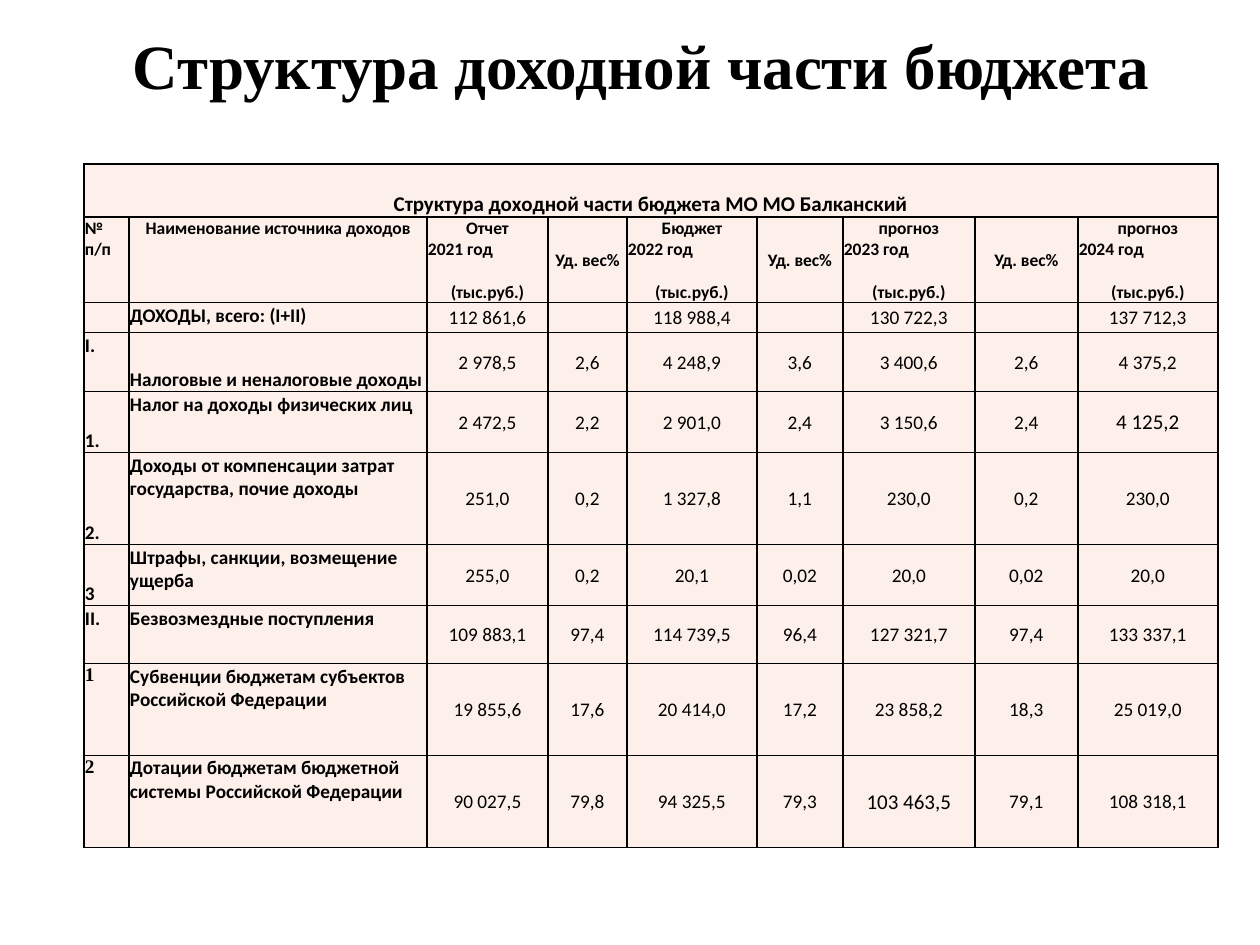
"""Build the slide with the table of budget revenue structure."""
from lxml.etree import SubElement
from pptx import Presentation
from pptx.dml.color import RGBColor
from pptx.enum.text import MSO_ANCHOR, PP_ALIGN
from pptx.oxml.ns import qn
from pptx.util import Pt

PX = 914400 // 126
BLACK = RGBColor(0x00, 0x00, 0x00)
CREAM = RGBColor(0xFD, 0xEF, 0xE9)
TOP, MIDDLE, BOTTOM = MSO_ANCHOR.TOP, MSO_ANCHOR.MIDDLE, MSO_ANCHOR.BOTTOM
LEFT, CENTER = PP_ALIGN.LEFT, PP_ALIGN.CENTER

COLUMN_WIDTHS = [45, 298, 121, 79, 130, 86, 132, 103, 140]
ROW_HEIGHTS = [53, 78, 30, 59, 61, 92, 61, 58, 92, 92]
TABLE_TITLE = "Структура доходной части бюджета МО МО Балканский"
SHARE = "Уд. вес%"
HEADERS = ["№ п/п", "Наименование источника доходов"]
for period in ["Отчет\n2021 год", "Бюджет\n2022 год", "прогноз\n2023 год", "прогноз\n2024 год"]:
    HEADERS += [period + "\n(тыс.руб.)", SHARE]
HEADERS.pop()

REVENUES = [
    ["", "ДОХОДЫ, всего: (I+II)", "112 861,6", "", "118 988,4", "", "130 722,3", "", "137 712,3"],
    ["I.", "Налоговые и неналоговые доходы",
     "2 978,5", "2,6", "4 248,9", "3,6", "3 400,6", "2,6", "4 375,2"],
    ["1.", "Налог на доходы физических лиц",
     "2 472,5", "2,2", "2 901,0", "2,4", "3 150,6", "2,4", "4 125,2"],
    ["2.", "Доходы от компенсации затрат государства, почие доходы",
     "251,0", "0,2", "1 327,8", "1,1", "230,0", "0,2", "230,0"],
    ["3", "Штрафы, санкции, возмещение ущерба",
     "255,0", "0,2", "20,1", "0,02", "20,0", "0,02", "20,0"],
    ["II.", "Безвозмездные поступления",
     "109 883,1", "97,4", "114 739,5", "96,4", "127 321,7", "97,4", "133 337,1"],
    ["1", "Субвенции бюджетам субъектов Российской Федерации",
     "19 855,6", "17,6", "20 414,0", "17,2", "23 858,2", "18,3", "25 019,0"],
    ["2", "Дотации бюджетам бюджетной системы Российской Федерации",
     "90 027,5", "79,8", "94 325,5", "79,3", "103 463,5", "79,1", "108 318,1"],
]
BOTTOM_CELLS = {(3, 1), (4, 0), (5, 0), (6, 0)}
SERIF_CELLS = {(8, 0), (9, 0)}
LARGE_CELLS = {(4, 8), (9, 6)}


def format_run(run, size, bold, font_name):
    run.font.size = Pt(size)
    run.font.bold = bold
    run.font.name = font_name
    run.font.color.rgb = BLACK


def format_cell(cell, text, size, bold, alignment, anchor, font_name="Calibri"):
    cell.margin_left = cell.margin_right = cell.margin_top = PX
    cell.margin_bottom = 0
    cell.vertical_anchor = anchor
    cell.text_frame.text = text
    for paragraph in cell.text_frame.paragraphs:
        paragraph.alignment = alignment
        for run in paragraph.runs:
            format_run(run, size, bold, font_name)
        if not text:
            SubElement(paragraph._p, qn("a:endParaRPr"), sz=str(size * 100))
    properties = cell._tc.get_or_add_tcPr()
    for side in ("a:lnL", "a:lnR", "a:lnT", "a:lnB"):
        border = SubElement(properties, qn(side), w=str(Pt(1)))
        border_fill = SubElement(border, qn("a:solidFill"))
        SubElement(border_fill, qn("a:srgbClr"), val=str(BLACK))
    cell.fill.solid()
    cell.fill.fore_color.rgb = CREAM


presentation = Presentation()
presentation.slide_width = 1260 * PX
presentation.slide_height = 945 * PX
slide = presentation.slides.add_slide(presentation.slide_layouts[5])

title = slide.shapes.title
title.left, title.top, title.width, title.height = 74 * PX, 5 * PX, 1134 * PX, 118 * PX
title.text_frame.text = "Структура доходной части бюджета"
title.text_frame.vertical_anchor = MIDDLE
title.text_frame.paragraphs[0].alignment = CENTER
format_run(title.text_frame.paragraphs[0].runs[0], 36, True, "Times New Roman")

table = slide.shapes.add_table(
    len(ROW_HEIGHTS), len(COLUMN_WIDTHS),
    84 * PX, 164 * PX, sum(COLUMN_WIDTHS) * PX, sum(ROW_HEIGHTS) * PX,
).table
table.first_row = table.horz_banding = False
for column, width in zip(table.columns, COLUMN_WIDTHS):
    column.width = width * PX
for row, height in zip(table.rows, ROW_HEIGHTS):
    row.height = height * PX

for column_index in range(len(COLUMN_WIDTHS)):
    text = "" if column_index else TABLE_TITLE
    format_cell(table.cell(0, column_index), text, 12, True, CENTER, BOTTOM)
table.cell(0, 0).merge(table.cell(0, len(COLUMN_WIDTHS) - 1))

for column_index, text in enumerate(HEADERS):
    cell = table.cell(1, column_index)
    alignment = CENTER if column_index else LEFT
    format_cell(cell, text, 10, True, alignment, MIDDLE if column_index > 1 else TOP)
    if "\n" in text:
        period, year, unit = cell.text_frame.paragraphs
        year.alignment = LEFT
        unit.space_before = Pt(12)

for row_index, revenue in enumerate(REVENUES, start=2):
    for column_index, text in enumerate(revenue):
        position = (row_index, column_index)
        is_value = column_index > 1
        anchor = MIDDLE if is_value else BOTTOM if position in BOTTOM_CELLS else TOP
        format_cell(
            table.cell(*position), text, 12 if position in LARGE_CELLS else 11,
            not is_value, CENTER if is_value else LEFT, anchor,
            "Times New Roman" if position in SERIF_CELLS else "Calibri",
        )

presentation.save("out.pptx")
